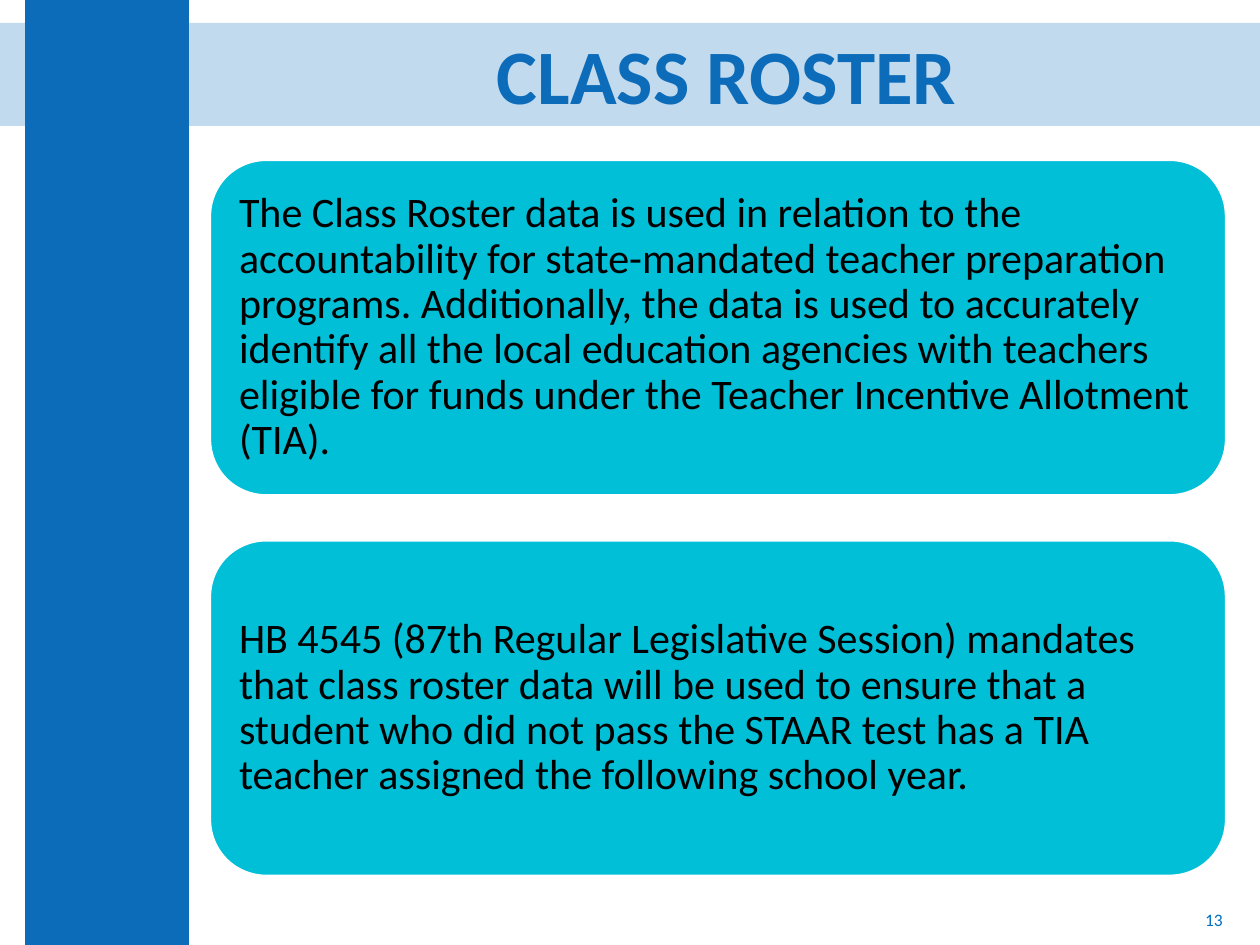
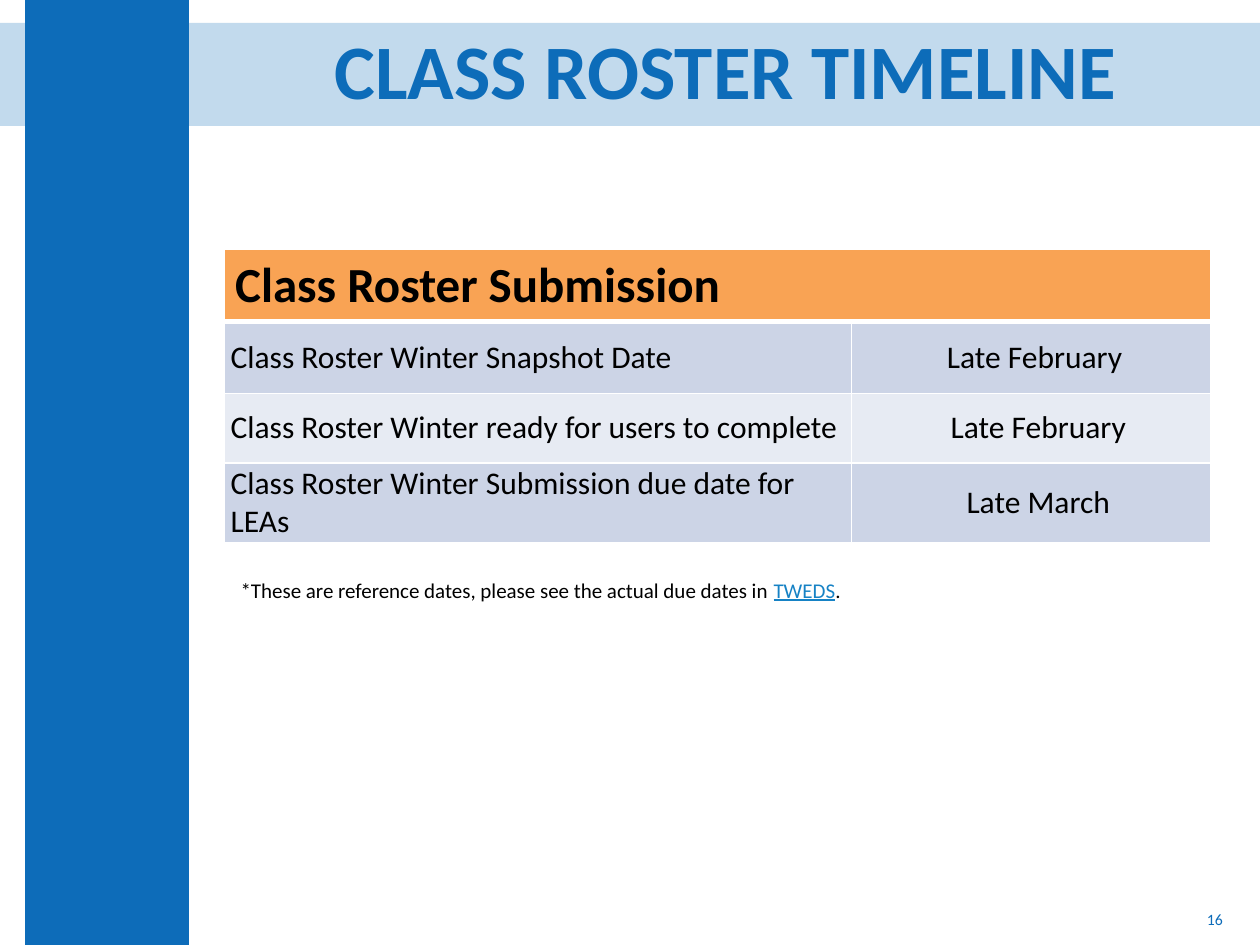
from lxml.etree import SubElement
from pptx import Presentation
from pptx.dml.color import RGBColor
from pptx.enum.shapes import MSO_SHAPE
from pptx.enum.text import MSO_ANCHOR, PP_ALIGN
from pptx.oxml.ns import qn
from pptx.util import Cm, Pt

BLUE, NUMBER_BLUE, LINK_BLUE = "0D6CB9", "0070C0", "1682C5"
CYAN, ORANGE, BLACK, WHITE = "00BFD7", "F9A354", "000000", "FFFFFF"
ROW_FILLS = ("CCD4E6", "E7EBF3")
FONT = "Calibri"
WIDTH, HEIGHT = 25.4, 19.05

TITLE = {"size": Pt(44), "bold": True, "color": BLUE}
CARD_TEXT = {"size": Pt(24)}
TABLE_HEAD = {"size": Pt(28), "bold": True}
TABLE_TEXT = {"size": Pt(18), "bold": False}
NOTE = {"size": Pt(12)}
LINK = NOTE | {"underline": True, "color": LINK_BLUE}

USES = [
    "The Class Roster data\u00a0is used in relation to the accountability for "
    "state-mandated teacher preparation programs. Additionally, the data is used "
    "to accurately identify all the local education agencies with teachers "
    "eligible for funds under the Teacher Incentive Allotment (TIA).",
    "HB 4545 (87th Regular Legislative Session) mandates that class roster data "
    "will be used to ensure that a student who did not pass the STAAR test has a "
    "TIA teacher assigned the following school year.",
]
DATES = [
    (["Class Roster Winter Snapshot Date"], "Late February", 0.13),
    (["Class Roster Winter ready for users to complete"], "Late February", 0.28),
    (["Class Roster Winter Submission due date for", "LEAs"], "Late March", 0.28),
]


def rgb(value):
    return RGBColor.from_string(value)


def set_all(obj, values):
    for name, value in values.items():
        setattr(obj, name, value)


def add_run(p, text, style):
    r = p.add_run()
    r.text = text
    values = {"name": FONT, "color": BLACK} | style
    r.font.color.rgb = rgb(values.pop("color"))
    set_all(r.font, values)


def write(tf, lines, style, **paragraph_format):
    for i, line in enumerate(lines):
        p = tf.add_paragraph() if i else tf.paragraphs[0]
        set_all(p, {"alignment": PP_ALIGN.LEFT} | paragraph_format)
        add_run(p, line, style)


def add_box(s, box, anchor=MSO_ANCHOR.MIDDLE):
    tf = s.shapes.add_textbox(*map(Cm, box)).text_frame
    set_all(tf, {"word_wrap": True, "vertical_anchor": anchor})
    return tf


def add_block(s, kind, box, fill, line=None):
    sp = s.shapes.add_shape(kind, *map(Cm, box))
    sp.shadow.inherit = False
    sp.fill.solid()
    sp.fill.fore_color.rgb = rgb(fill)
    if line:
        sp.line.color.rgb = rgb(line)
        sp.line.width = Pt(1)
    else:
        sp.line.fill.background()
    return sp


def add_frame(prs, title, title_box, number, number_style):
    s = prs.slides.add_slide(prs.slide_layouts[6])
    band = add_block(s, MSO_SHAPE.RECTANGLE, (0, 0.46, WIDTH, 2.08), BLUE)
    color = band.fill._xPr.find(qn("a:solidFill"))[0]
    SubElement(color, qn("a:alpha"), val="25000")
    add_block(s, MSO_SHAPE.RECTANGLE, (0.51, 0, 3.3, HEIGHT), BLUE)
    write(add_box(s, (19.18, 18.03, 5.72, 1.02)), [number], number_style,
          alignment=PP_ALIGN.RIGHT)
    write(add_box(s, title_box), [title], TITLE,
          alignment=PP_ALIGN.CENTER, line_spacing=0.9)
    return s


def add_cards(s, box, texts, gap):
    left, top, width, height = box
    card_height = (height - gap * (len(texts) - 1)) / len(texts)
    for i, text in enumerate(texts):
        card_top = top + i * (card_height + gap)
        sp = add_block(s, MSO_SHAPE.ROUNDED_RECTANGLE,
                       (left, card_top, width, card_height), CYAN, WHITE)
        tf = sp.text_frame
        margins = dict.fromkeys(
            ("margin_left", "margin_right", "margin_top", "margin_bottom"), Cm(0.25))
        set_all(tf, margins | {"word_wrap": True, "vertical_anchor": MSO_ANCHOR.MIDDLE})
        write(tf, [text], CARD_TEXT, line_spacing=0.9)


def format_cell(cell, fill, indent, bottom=1):
    set_all(cell, {"margin_left": Cm(indent), "margin_right": 0, "margin_top": 0,
                   "margin_bottom": 0, "vertical_anchor": MSO_ANCHOR.MIDDLE})
    tcPr = cell._tc.get_or_add_tcPr()
    for side, width in {"L": 1, "R": 1, "T": 1, "B": bottom}.items():
        ln = SubElement(tcPr, qn(f"a:ln{side}"), w=str(Pt(width)))
        SubElement(SubElement(ln, qn("a:solidFill")), qn("a:srgbClr"), val=WHITE)
    cell.fill.solid()
    cell.fill.fore_color.rgb = rgb(fill)


def add_timeline(s, box, heading, rows):
    left, top, width, height = box
    table = s.shapes.add_table(len(rows) + 1, 2, *map(Cm, box)).table
    set_all(table, {"first_row": False, "horz_banding": False})
    for column, share in zip(table.columns, (0.636, 0.364)):
        column.width = Cm(width * share)
    for row, row_height in zip(table.rows, (1.45, 1.45, 1.4, height - 4.3)):
        row.height = Cm(row_height)
    table.cell(0, 0).merge(table.cell(0, 1))
    for cell in table.rows[0].cells:
        format_cell(cell, ORANGE, 0.22, bottom=3)
    write(table.cell(0, 0).text_frame, [heading], TABLE_HEAD)
    for i, (event, date, date_indent) in enumerate(rows):
        event_cell, date_cell = table.rows[i + 1].cells
        fill = ROW_FILLS[i % 2]
        format_cell(event_cell, fill, 0.13)
        format_cell(date_cell, fill, date_indent)
        write(event_cell.text_frame, event, TABLE_TEXT)
        write(date_cell.text_frame, [date], TABLE_TEXT, alignment=PP_ALIGN.CENTER)


def add_note(s, box):
    p = add_box(s, box, MSO_ANCHOR.TOP).paragraphs[0]
    add_run(p, "*These are reference dates, please see the actual due dates in ", NOTE)
    add_run(p, "TWEDS", LINK)
    add_run(p, ".", NOTE)


def main():
    prs = Presentation()
    set_all(prs, {"slide_width": Cm(WIDTH), "slide_height": Cm(HEIGHT)})
    s = add_frame(prs, "CLASS ROSTER", (3.96, 0.56, 21.39, 2.08), "13",
                  {"size": Pt(10), "color": NUMBER_BLUE})
    add_cards(s, (4.24, 3.23, 20.47, 14.42), USES, 0.92)
    s = add_frame(prs, "CLASS ROSTER TIMELINE", (4.6, 0.46, 20.07, 2.08), "16",
                  {"size": Pt(9), "color": BLUE})
    add_timeline(s, (4.52, 5.03, 19.89, 5.92), "Class Roster Submission", DATES)
    add_note(s, (4.6, 11.51, 18.49, 1.55))
    prs.save("out.pptx")


if __name__ == "__main__":
    main()
